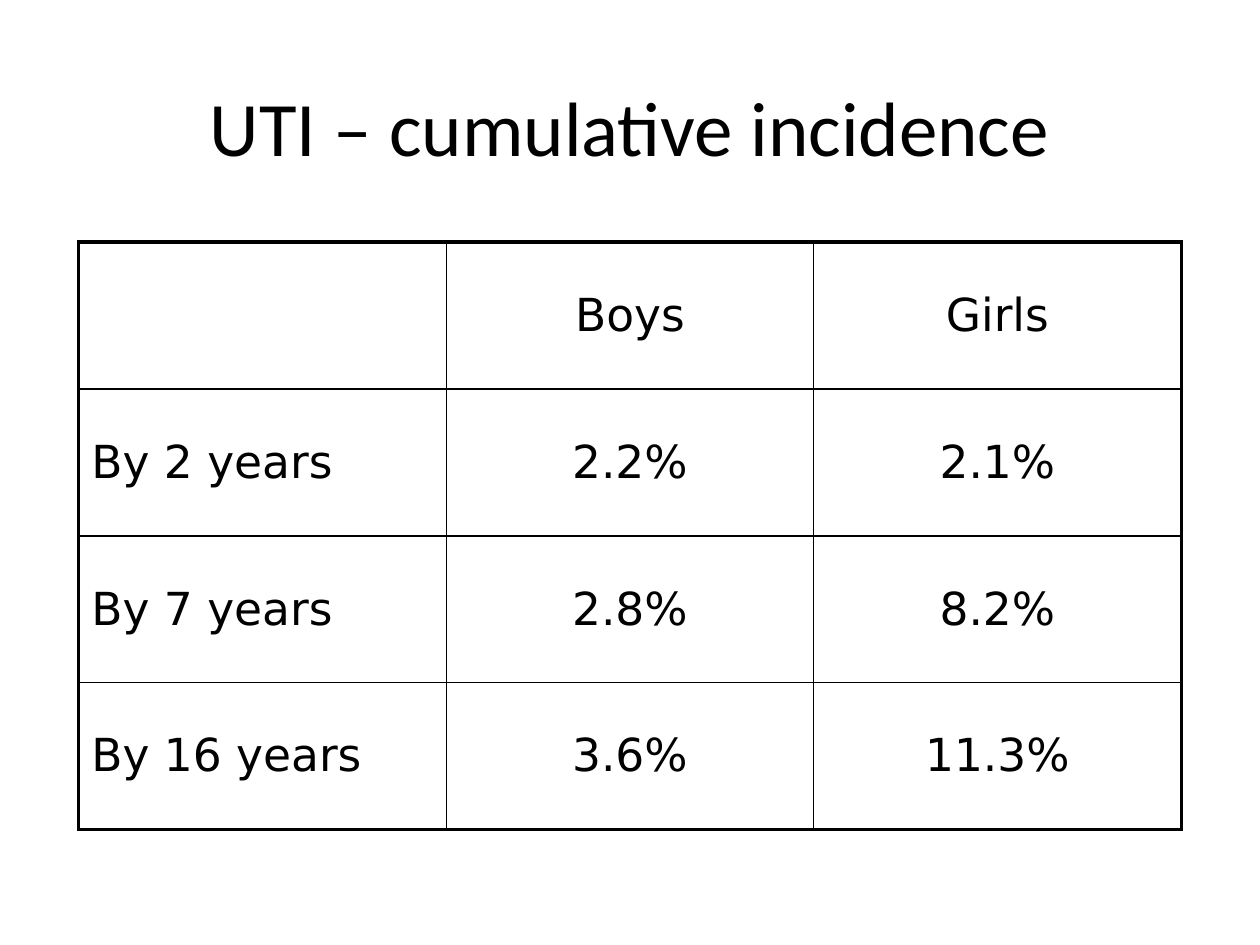
from lxml.etree import SubElement
from pptx import Presentation
from pptx.dml.color import RGBColor
from pptx.enum.text import MSO_ANCHOR as Anchor, PP_ALIGN as Align
from pptx.oxml.ns import qn
from pptx.util import Inches, Pt

INK = "000000"
INCIDENCE = [
    ["", "Boys", "Girls"],
    ["By 2 years", "2.2%", "2.1%"],
    ["By 7 years", "2.8%", "8.2%"],
    ["By 16 years", "3.6%", "11.3%"],
]
LEFT, WIDTH = 0.0625, 0.875
OUTER_RULE, INNER_RULE = 2.25, 1


def color(value):
    """Turn a hex string into a colour."""
    return RGBColor.from_string(value)


def format_text(paragraph, align, font_name, size):
    """Align a paragraph and set its font."""
    paragraph.alignment = align
    font_format = {"name": font_name, "size": Pt(size), "bold": False}
    for attribute, value in font_format.items():
        setattr(paragraph.font, attribute, value)
    paragraph.font.color.rgb = color(INK)


def add_rule(cell, side, points):
    """Draw the border on one side of a cell."""
    rule = SubElement(cell._tc.get_or_add_tcPr(), qn(f"a:ln{side}"), w=str(Pt(points)))
    fill = SubElement(rule, qn("a:solidFill"))
    SubElement(fill, qn("a:srgbClr"), val=INK)


def set_title(slide, wording, page_width, page_height):
    """Place and format the slide title."""
    title = slide.shapes.title
    place = {
        "left": int(page_width * LEFT),
        "top": int(page_height * 0.044),
        "width": int(page_width * WIDTH),
        "height": int(page_height * 0.178),
    }
    for attribute, value in place.items():
        setattr(title, attribute, value)
    title.text_frame.text = wording
    title.text_frame.vertical_anchor = Anchor.MIDDLE
    format_text(title.text_frame.paragraphs[0], Align.CENTER, "Calibri", 44)


def add_incidence_table(slide, page_width, page_height):
    """Add the table with a heavy frame and thin inner rules."""
    last_row, last_column = len(INCIDENCE) - 1, len(INCIDENCE[0]) - 1
    table = slide.shapes.add_table(
        last_row + 1, last_column + 1,
        int(page_width * LEFT), int(page_height * 0.256),
        int(page_width * WIDTH), int(page_height * 0.622),
    ).table
    table.first_row = table.horz_banding = False
    for row, entries in enumerate(INCIDENCE):
        for column, entry in enumerate(entries):
            cell = table.cell(row, column)
            cell.text = entry
            cell.vertical_anchor = Anchor.MIDDLE
            align = Align.CENTER if column else Align.LEFT
            format_text(cell.text_frame.paragraphs[0], align, "DejaVu Sans", 26)
            on_frame = {
                "L": column == 0,
                "R": column == last_column,
                "T": row == 0,
                "B": row == last_row,
            }
            for side, is_outer in on_frame.items():
                add_rule(cell, side, OUTER_RULE if is_outer else INNER_RULE)
            cell.fill.background()


def main():
    """Build the slide and save it."""
    deck = Presentation()
    deck.slide_width, deck.slide_height = Inches(10), Inches(7.5)
    page = deck.slide_width, deck.slide_height
    slide = deck.slides.add_slide(deck.slide_layouts[5])
    set_title(slide, "UTI – cumulative incidence", *page)
    add_incidence_table(slide, *page)
    deck.save("out.pptx")


if __name__ == "__main__":
    main()
